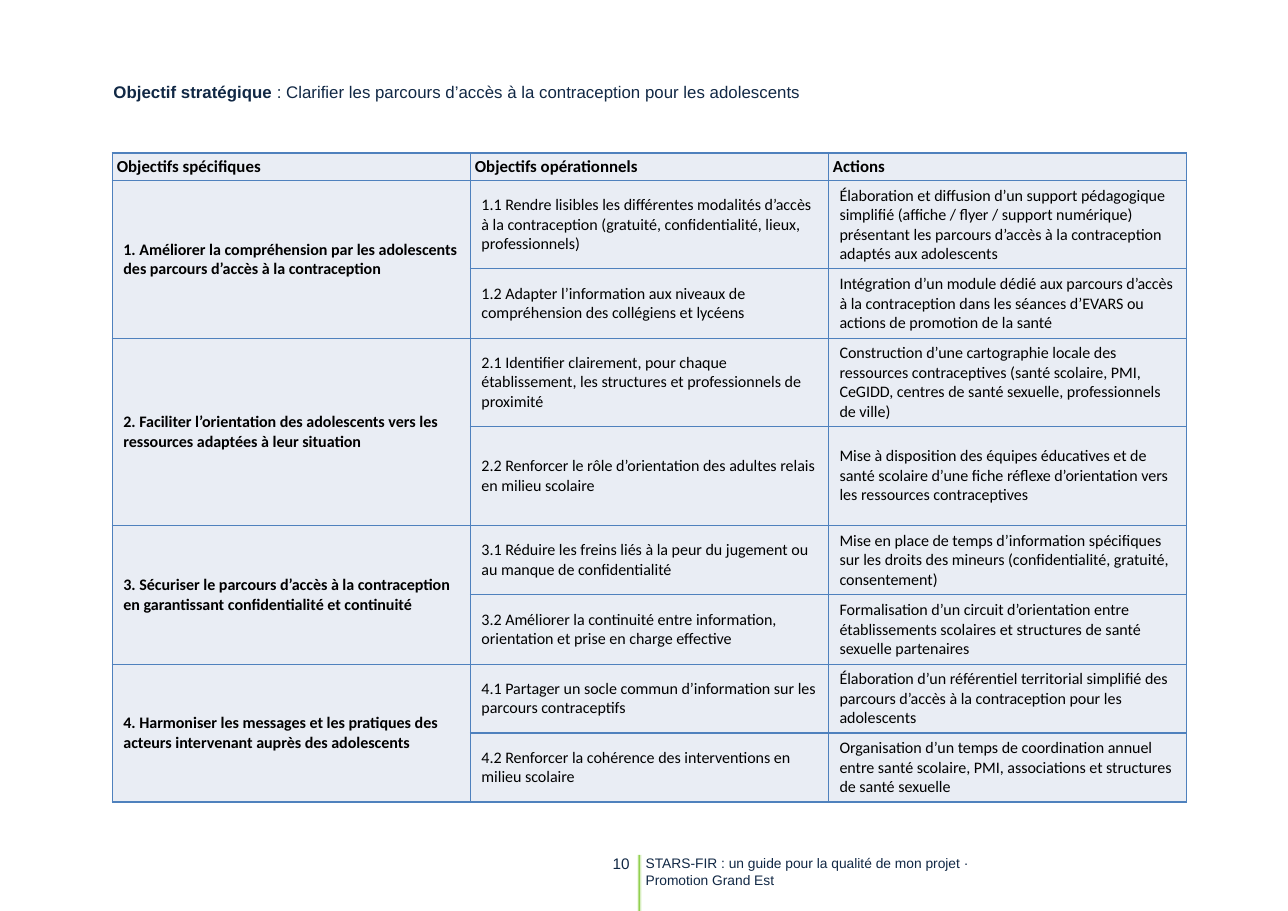
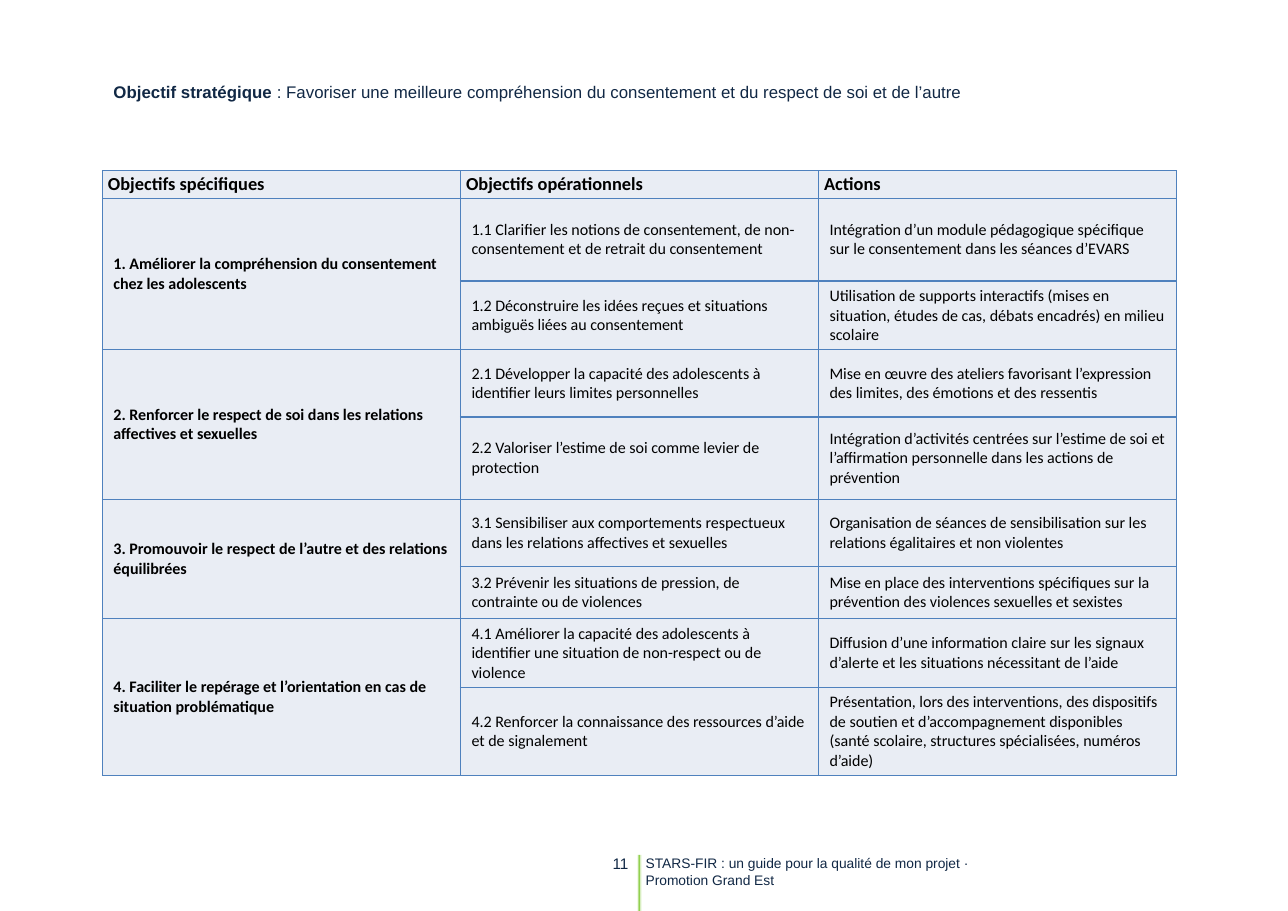
from lxml import etree
from pptx import Presentation
from pptx.dml.color import RGBColor
from pptx.enum.text import MSO_ANCHOR, MSO_AUTO_SIZE, PP_ALIGN
from pptx.oxml.ns import qn
from pptx.util import Inches, Pt

COLORS = {"navy": "112845", "green": "92D050", "black": "000000",
          "cell": "E9EDF4", "border": "4F81BD"}
FOOTER = "STARS-FIR : un guide pour la qualité de mon projet · Promotion Grand Est"
HEADERS = ["Objectifs spécifiques", "Objectifs opérationnels", "Actions"]
COL_WIDTH = 3.25

# Each goal: specific objective, then (operational objective, action) pairs
SLIDES = [
    {"number": "10", "left": 1.02, "top": 1.39, "header_size": 11, "header_inset": 0.04,
     "heights": [0.25, 0.8, 0.63, 0.8, 0.9, 0.63, 0.63, 0.62, 0.62],
     "strategy": "Clarifier les parcours d’accès à la contraception pour les adolescents",
     "goals": [
         ("1. Améliorer la compréhension par les adolescents des parcours d’accès à la contraception", [
             ("1.1 Rendre lisibles les différentes modalités d’accès à la contraception (gratuité, "
              "confidentialité, lieux, professionnels)",
              "Élaboration et diffusion d’un support pédagogique simplifié (affiche / flyer / support "
              "numérique) présentant les parcours d’accès à la contraception adaptés aux adolescents"),
             ("1.2 Adapter l’information aux niveaux de compréhension des collégiens et lycéens",
              "Intégration d’un module dédié aux parcours d’accès à la contraception dans les séances "
              "d’EVARS ou actions de promotion de la santé")]),
         ("2. Faciliter l’orientation des adolescents vers les ressources adaptées à leur situation", [
             ("2.1 Identifier clairement, pour chaque établissement, les structures et professionnels "
              "de proximité",
              "Construction d’une cartographie locale des ressources contraceptives (santé scolaire, "
              "PMI, CeGIDD, centres de santé sexuelle, professionnels de ville)"),
             ("2.2 Renforcer le rôle d’orientation des adultes relais en milieu scolaire",
              "Mise à disposition des équipes éducatives et de santé scolaire d’une fiche réflexe "
              "d’orientation vers les ressources contraceptives")]),
         ("3. Sécuriser le parcours d’accès à la contraception en garantissant confidentialité et "
          "continuité", [
             ("3.1 Réduire les freins liés à la peur du jugement ou au manque de confidentialité",
              "Mise en place de temps d’information spécifiques sur les droits des mineurs "
              "(confidentialité, gratuité, consentement)"),
             ("3.2 Améliorer la continuité entre information, orientation et prise en charge effective",
              "Formalisation d’un circuit d’orientation entre établissements scolaires et structures "
              "de santé sexuelle partenaires")]),
         ("4. Harmoniser les messages et les pratiques des acteurs intervenant auprès des adolescents", [
             ("4.1 Partager un socle commun d’information sur les parcours contraceptifs",
              "Élaboration d’un référentiel territorial simplifié des parcours d’accès à la "
              "contraception pour les adolescents"),
             ("4.2 Renforcer la cohérence des interventions en milieu scolaire",
              "Organisation d’un temps de coordination annuel entre santé scolaire, PMI, associations "
              "et structures de santé sexuelle")]),
     ]},
    {"number": "11", "left": 0.93, "top": 1.55, "header_size": 12, "header_inset": 0.05,
     "heights": [0.25, 0.75, 0.62, 0.61, 0.75, 0.61, 0.47, 0.62, 0.8],
     "strategy": "Favoriser une meilleure compréhension du consentement et du respect de soi et de l’autre",
     "goals": [
         ("1. Améliorer la compréhension du consentement chez les adolescents", [
             ("1.1 Clarifier les notions de consentement, de non-consentement et de retrait du "
              "consentement",
              "Intégration d’un module pédagogique spécifique sur le consentement dans les séances "
              "d’EVARS"),
             ("1.2 Déconstruire les idées reçues et situations ambiguës liées au consentement",
              "Utilisation de supports interactifs (mises en situation, études de cas, débats "
              "encadrés) en milieu scolaire")]),
         ("2. Renforcer le respect de soi dans les relations affectives et sexuelles", [
             ("2.1 Développer la capacité des adolescents à identifier leurs limites personnelles",
              "Mise en œuvre des ateliers favorisant l’expression des limites, des émotions et des "
              "ressentis"),
             ("2.2 Valoriser l’estime de soi comme levier de protection",
              "Intégration d’activités centrées sur l’estime de soi et l’affirmation personnelle dans "
              "les actions de prévention")]),
         ("3. Promouvoir le respect de l’autre et des relations équilibrées", [
             ("3.1 Sensibiliser aux comportements respectueux dans les relations affectives et sexuelles",
              "Organisation de séances de sensibilisation sur les relations égalitaires et non violentes"),
             ("3.2 Prévenir les situations de pression, de contrainte ou de violences",
              "Mise en place des interventions spécifiques sur la prévention des violences sexuelles "
              "et sexistes")]),
         ("4. Faciliter le repérage et l’orientation en cas de situation problématique", [
             ("4.1 Améliorer la capacité des adolescents à identifier une situation de non-respect ou "
              "de violence",
              "Diffusion d’une information claire sur les signaux d’alerte et les situations "
              "nécessitant de l’aide"),
             ("4.2 Renforcer la connaissance des ressources d’aide et de signalement",
              "Présentation, lors des interventions, des dispositifs de soutien et d’accompagnement "
              "disponibles (santé scolaire, structures spécialisées, numéros d’aide)")]),
     ]},
]


def set_font(font, name, size, color, bold=False):
    font.name, font.size, font.bold = name, Pt(size), bold
    font.color.rgb = RGBColor.from_string(COLORS[color])


def style_cell(cell, size, bold):
    cell.vertical_anchor = MSO_ANCHOR.MIDDLE
    cell.fill.solid()
    cell.fill.fore_color.rgb = RGBColor.from_string(COLORS["cell"])
    for p in cell.text_frame.paragraphs:
        for r in p.runs:
            set_font(r.font, "Calibri", size, "black", bold)
    # Borders come before the fill in the cell properties
    tc_pr = cell._tc.get_or_add_tcPr()
    for i, side in enumerate(("a:lnL", "a:lnR", "a:lnT", "a:lnB")):
        ln = etree.Element(qn(side), w=str(Pt(1)))
        fill = etree.SubElement(ln, qn("a:solidFill"))
        etree.SubElement(fill, qn("a:srgbClr"), val=COLORS["border"])
        tc_pr.insert(i, ln)


prs = Presentation()
prs.slide_width, prs.slide_height = Inches(11.69), Inches(8.27)

for data in SLIDES:
    s = prs.slides.add_slide(prs.slide_layouts[5])

    # Title: bold label, then the strategic objective
    title = s.shapes.title
    title.left, title.top = Inches(0.93), Inches(0.69)
    title.width, title.height = Inches(9.83), Inches(0.29)
    tf = title.text_frame
    tf.auto_size, tf.vertical_anchor = MSO_AUTO_SIZE.NONE, MSO_ANCHOR.TOP
    p = tf.paragraphs[0]
    p.alignment = PP_ALIGN.LEFT
    for text, bold in (("Objectif stratégique ", True), (": " + data["strategy"], False)):
        r = p.add_run()
        r.text = text
        set_font(r.font, "Arial", 11, "navy", bold)

    # Footer rule: three thin stripes, in thousandths of an inch
    builder = None
    for x in (5790, 5802, 5814):
        if builder is None:
            builder = s.shapes.build_freeform(x, 7760, scale=Inches(1) / 1000)
        else:
            builder.move_to(x, 7760)
        builder.add_line_segments([(x + 6, 7760), (x + 6, 8270), (x, 8270)], close=True)
    rule = builder.convert_to_shape()
    rule.shadow.inherit = False
    rule.fill.solid()
    rule.fill.fore_color.rgb = RGBColor.from_string(COLORS["green"])
    rule.line.fill.background()

    # Page number and footer text
    for text, left, width, height, size in ((data["number"], 5.56, 0.22, 0.18, 10),
                                            (FOOTER, 5.86, 2.96, 0.3, 9)):
        sp = s.shapes.add_textbox(Inches(left), Inches(7.75), Inches(width), Inches(height))
        tf = sp.text_frame
        tf.word_wrap = True
        tf.margin_left = tf.margin_right = tf.margin_top = tf.margin_bottom = 0
        tf.text = text
        p = tf.paragraphs[0]
        if text == FOOTER:
            p.line_spacing = Pt(11.3)
        set_font(p.runs[0].font, "Arial", size, "navy")

    # Objectives table
    heights = data["heights"]
    table = s.shapes.add_table(len(heights), len(HEADERS), Inches(data["left"]), Inches(data["top"]),
                               Inches(COL_WIDTH * len(HEADERS)), Inches(sum(heights))).table
    for col in table.columns:
        col.width = Inches(COL_WIDTH)
    for row, height in zip(table.rows, heights):
        row.height = Inches(height)

    for c, header in enumerate(HEADERS):
        cell = table.cell(0, c)
        cell.text = header
        cell.margin_left = cell.margin_right = Inches(data["header_inset"])
        cell.margin_top = cell.margin_bottom = Inches(0.02)
        style_cell(cell, data["header_size"], True)

    row = 1
    for goal, pairs in data["goals"]:
        table.cell(row, 0).merge(table.cell(row + len(pairs) - 1, 0))
        table.cell(row, 0).text = goal
        for pair in pairs:
            for c, text in enumerate(pair, start=1):
                table.cell(row, c).text = text
            for c in range(len(HEADERS)):
                style_cell(table.cell(row, c), 10.5, c == 0)
            row += 1

prs.save("out.pptx")
